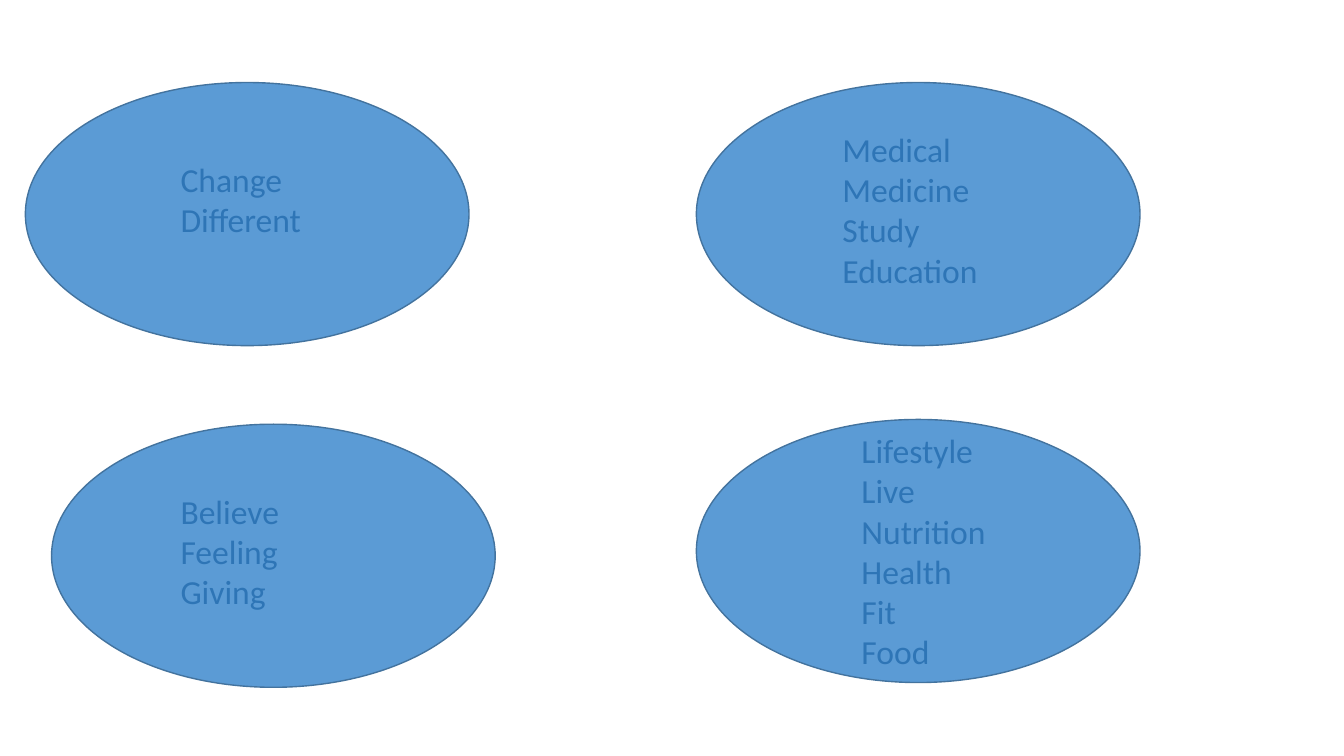
from pptx import Presentation
from pptx.dml.color import RGBColor
from pptx.enum.shapes import MSO_SHAPE
from pptx.enum.text import MSO_ANCHOR, PP_ALIGN
from pptx.util import Cm, Pt

OVAL_WIDTH, OVAL_HEIGHT = 11.18, 6.63
WORDS_WIDTH, WORDS_INDENT = 12.09, 2.79
LINE_HEIGHT, INSET = 1.03, 0.13

# Each theme: oval corner, offset of its words, free lines above and below, words
THEMES = [
    ((1.3, 10.69), (0.46, 0.51), (1, 1), ["Believe", "Feeling", "Giving"]),
    ((17.55, 10.57), (1.37, 0.13), (0, 1),
     ["Lifestyle", "Live", "Nutrition", "Health", "Fit", "Food"]),
    ((17.55, 2.08), (0.89, 0), (1, 0),
     ["Medical", "Medicine", "Study", "Education"]),
    ((0.64, 2.08), (1.12, 0.76), (1, 0), ["Change", "Different"]),
]


def color(value):
    """Return the colour for a hex string."""
    return RGBColor.from_string(value)


def write(paragraph, text, size=24, font="Calibri", fill="2E75B6", align=PP_ALIGN.LEFT):
    """Put formatted text into a paragraph."""
    paragraph.alignment = align
    run = paragraph.add_run()
    run.text = text
    run.font.size = Pt(size)
    run.font.name = font
    run.font.color.rgb = color(fill)


def add_oval(slide, left, top):
    """Draw the oval behind a theme's words."""
    oval = slide.shapes.add_shape(
        MSO_SHAPE.OVAL, Cm(left), Cm(top), Cm(OVAL_WIDTH), Cm(OVAL_HEIGHT))
    oval.shadow.inherit = False
    oval.fill.solid()
    oval.fill.fore_color.rgb = color("5B9BD5")
    oval.line.color.rgb = color("43739E")
    oval.line.width = Pt(1)


def add_words(slide, left, top, free_lines, words):
    """List a theme's words, one per line, from the given corner."""
    above, below = free_lines
    height = (above + len(words) + below) * LINE_HEIGHT + 2 * INSET
    word_list = slide.shapes.add_textbox(
        Cm(left), Cm(top), Cm(WORDS_WIDTH), Cm(height)).text_frame
    word_list.word_wrap = True
    word_list.vertical_anchor = MSO_ANCHOR.TOP
    word_list.margin_left = Cm(WORDS_INDENT)
    word_list.margin_top = Cm(INSET + above * LINE_HEIGHT)
    for index, word in enumerate(words):
        write(word_list.add_paragraph() if index else word_list.paragraphs[0], word)


def add_theme(slide, corner, offset, free_lines, words):
    """Place an oval and its words relative to the oval's corner."""
    left, top = corner
    add_oval(slide, left, top)
    add_words(slide, left + offset[0], top + offset[1], free_lines, words)


def main():
    """Build and save the slide."""
    deck = Presentation()
    deck.slide_width, deck.slide_height = Cm(33.87), Cm(19.05)
    slide = deck.slides.add_slide(deck.slide_layouts[6])
    for theme in THEMES:
        add_theme(slide, *theme)
    deck.save("out.pptx")


if __name__ == "__main__":
    main()
